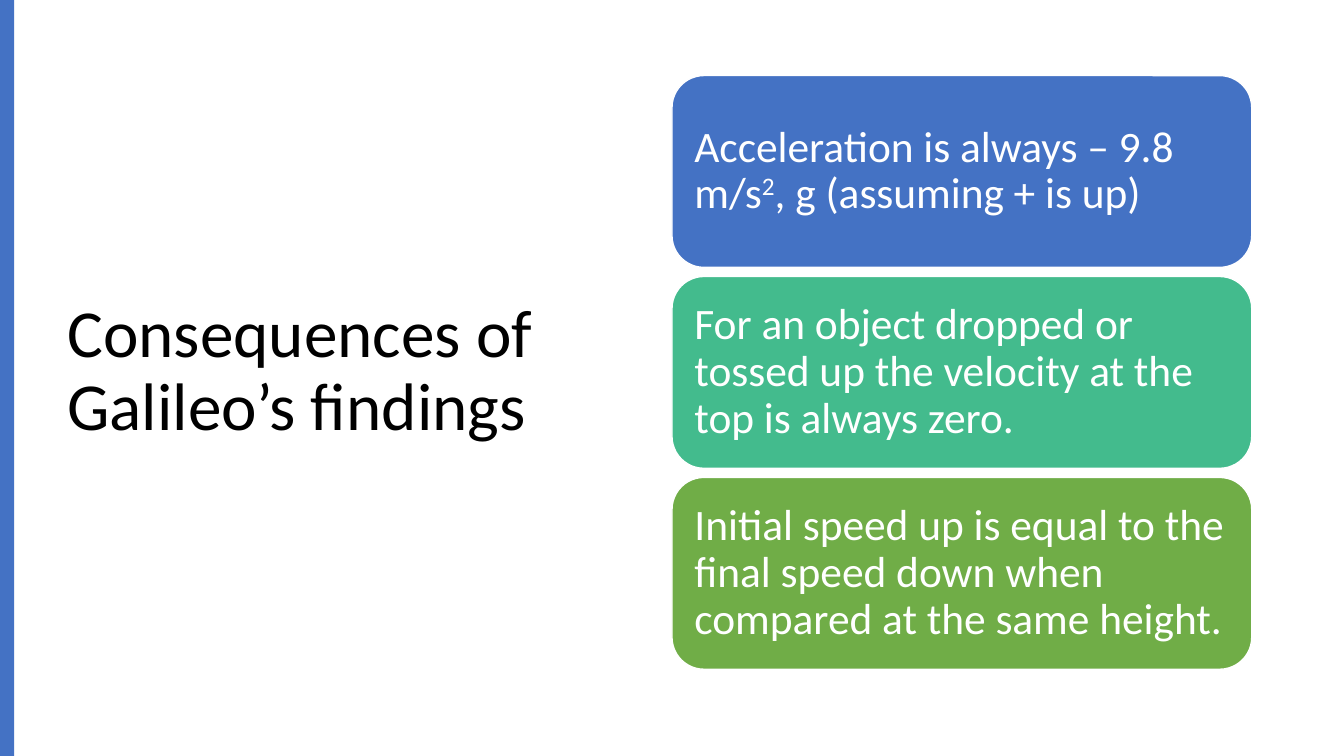
from dataclasses import dataclass

from pptx import Presentation
from pptx.dml.color import RGBColor
from pptx.enum.shapes import MSO_SHAPE
from pptx.enum.text import MSO_ANCHOR, PP_ALIGN
from pptx.util import Inches, Pt

RECT = MSO_SHAPE.RECTANGLE
ROUND = MSO_SHAPE.ROUNDED_RECTANGLE
MIDDLE = MSO_ANCHOR.MIDDLE
LEFT = PP_ALIGN.LEFT
WIDE, HIGH = 13.33, 7.5


@dataclass(frozen=True)
class Theme:
    """Hold the colours and type sizes of the slide."""
    font: str = "Calibri"
    ink: str = "000000"
    paper: str = "FFFFFF"
    bar: str = "4472C4"
    cards: tuple = ("4472C4", "43BB8D", "70AD47")
    title: int = 48
    body: int = 31


THEME = Theme()
TITLE = "Consequences of Galileo’s findings"
POINTS = (
    (("Acceleration is always – 9.8 m/s", 0), ("2", 30), (", g (assuming + is up)", 0)),
    (("For an object dropped or tossed up the velocity at the top is always zero.", 0),),
    (("Initial speed up is equal to the final speed down when compared at the same height.", 0),),
)


def write(shape, runs, size, color, pad=(0.1, 0.05)):
    """Write runs of (text, raise in percent) into a shape."""
    frame = shape.text_frame
    frame.word_wrap = True
    frame.vertical_anchor = MIDDLE
    frame.margin_left = frame.margin_right = Inches(pad[0])
    frame.margin_top = frame.margin_bottom = Inches(pad[1])
    para = frame.paragraphs[0]
    para.alignment = LEFT
    para.line_spacing = 0.9
    for text, lift in runs:
        run = para.add_run()
        run.text = text
        run.font.name = THEME.font
        run.font.size = Pt(size)
        run.font.color.rgb = RGBColor.from_string(color)
        if lift:
            run.font._element.set("baseline", str(lift * 1000))


def block(slide, kind, box, fill, line=None):
    """Add a filled shape, outlined if a line colour is given."""
    shape = slide.shapes.add_shape(kind, *map(Inches, box))
    shape.shadow.inherit = False
    shape.fill.solid()
    shape.fill.fore_color.rgb = RGBColor.from_string(fill)
    if line:
        shape.line.color.rgb = RGBColor.from_string(line)
        shape.line.width = Pt(1)
    else:
        shape.line.fill.background()
    return shape


def heading(slide, box):
    """Place the slide title in its box."""
    shape = slide.shapes.add_textbox(*map(Inches, box))
    write(shape, [(TITLE, 0)], THEME.title, THEME.ink)


def stack(slide, box, gap=0.09):
    """Stack one card per point down the box at equal gaps."""
    left, top, width, height = box
    tall = (height - gap * (len(POINTS) - 1)) / len(POINTS)
    for row, (runs, fill) in enumerate(zip(POINTS, THEME.cards)):
        place = (left, top + row * (tall + gap), width, tall)
        card = block(slide, ROUND, place, fill, THEME.paper)
        write(card, runs, THEME.body, THEME.paper, pad=(0.13, 0.13))


def main():
    """Build and save the slide."""
    deck = Presentation()
    deck.slide_width, deck.slide_height = Inches(WIDE), Inches(HIGH)
    slide = deck.slides.add_slide(deck.slide_layouts[6])
    heading(slide, (0.57, 0.68, 5.67, 6.02))
    block(slide, RECT, (0, 0, 0.14, HIGH), THEME.bar)
    stack(slide, (WIDE / 2, HIGH / 10, 5.75, 5.89))
    deck.save("out.pptx")


if __name__ == "__main__":
    main()
